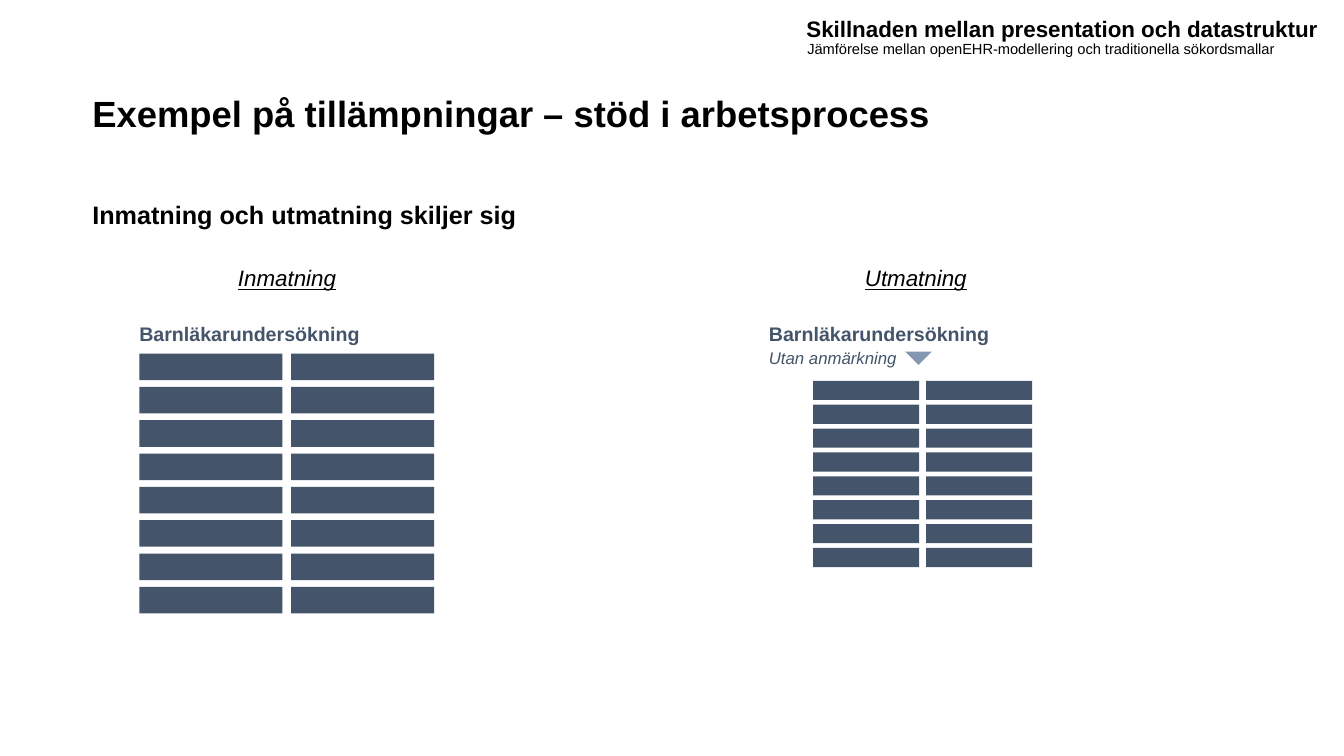
from dataclasses import dataclass
from typing import Any

import pptx
import pptx.dml.color
import pptx.enum.shapes
import pptx.enum.text
import pptx.util

Pt = pptx.util.Pt
Shape = pptx.enum.shapes.MSO_SHAPE
Anchor = pptx.enum.text.MSO_ANCHOR

BLACK = pptx.dml.color.RGBColor(0x00, 0x00, 0x00)
SLATE = pptx.dml.color.RGBColor(0x44, 0x54, 0x6A)
LIGHT_SLATE = pptx.dml.color.RGBColor(0x84, 0x97, 0xB0)
FONT = "Arial"
ROWS = 8
COLUMNS = 2


@dataclass(frozen=True)
class Frame:
    left: float
    top: float
    width: float
    height: float


@dataclass(frozen=True)
class FieldGrid:
    first: Frame
    column_step: float
    row_step: float


@dataclass(frozen=True)
class FormView:
    heading: str
    heading_left: float
    form_left: float
    grid: FieldGrid


VIEWS = [
    FormView("Inmatning", 170, 99.5,
             FieldGrid(Frame(99.5, 252.6, 102.2, 19), 108.5, 23.8)),
    FormView("Utmatning", 617.8, 549.2,
             FieldGrid(Frame(580.8, 272, 75.8, 13.7), 80.7, 17.05)),
]


def place(box: Any, frame: Frame) -> None:
    box.left, box.top = Pt(frame.left), Pt(frame.top)
    box.width, box.height = Pt(frame.width), Pt(frame.height)


def write(box: Any, text: str, *, size: float, color: Any = BLACK,
          bold: bool = False, italic: bool = False,
          underline: bool = False, anchor: Any = Anchor.TOP) -> None:
    body = box.text_frame
    body.auto_size = pptx.enum.text.MSO_AUTO_SIZE.NONE
    body.word_wrap = True
    body.vertical_anchor = anchor
    body.margin_left = body.margin_top = Pt(0)
    body.margin_right = body.margin_bottom = Pt(0)
    para = body.paragraphs[0]
    para.alignment = pptx.enum.text.PP_ALIGN.LEFT
    span = para.add_run()
    span.text = text
    span.font.name = FONT
    span.font.size = Pt(size)
    span.font.color.rgb = color
    span.font.bold = bold
    span.font.italic = italic
    span.font.underline = underline


def add_text(page: Any, frame: Frame, text: str, **style: Any) -> None:
    box = page.shapes.add_textbox(0, 0, 0, 0)
    place(box, frame)
    write(box, text, **style)


def add_block(shapes: Any, kind: Any, frame: Frame, color: Any) -> Any:
    block = shapes.add_shape(kind, Pt(frame.left), Pt(frame.top),
                             Pt(frame.width), Pt(frame.height))
    block.shadow.inherit = False
    block.fill.solid()
    block.fill.fore_color.rgb = color
    block.line.fill.background()
    return block


def add_grid(page: Any, grid: FieldGrid) -> None:
    group = page.shapes.add_group_shape()
    first = grid.first
    for row in range(ROWS):
        for column in range(COLUMNS):
            cell = Frame(first.left + column * grid.column_step,
                         first.top + row * grid.row_step,
                         first.width, first.height)
            add_block(group.shapes, Shape.RECTANGLE, cell, SLATE)


def add_view(page: Any, view: FormView) -> None:
    add_text(page, Frame(view.heading_left, 188.8, 76.5, 28), view.heading,
             size=16, italic=True, underline=True)
    add_text(page, Frame(view.form_left, 229.7, 188.5, 28),
             "Barnläkarundersökning", size=14, color=SLATE, bold=True)
    add_grid(page, view.grid)


def main() -> None:
    deck = pptx.Presentation()
    deck.slide_width, deck.slide_height = Pt(960), Pt(540)
    page = deck.slides.add_slide(deck.slide_layouts[5])

    title = page.shapes.title
    place(title, Frame(66, 28.8, 828, 104.4))
    write(title, "Exempel på tillämpningar – stöd i arbetsprocess",
          size=26, bold=True, anchor=Anchor.MIDDLE)

    add_text(page, Frame(66, 142.6, 319, 48),
             "Inmatning och utmatning skiljer sig", size=18, bold=True)
    add_text(page, Frame(576, 2.2, 384, 36.7),
             "Skillnaden mellan presentation och datastruktur",
             size=16, bold=True, anchor=Anchor.MIDDLE)
    add_text(page, Frame(576.7, 28.8, 363, 20),
             "Jämförelse mellan openEHR-modellering och traditionella sökordsmallar",
             size=10.5)

    for view in VIEWS:
        add_view(page, view)

    add_text(page, Frame(549.2, 248.4, 95, 18.7), "Utan anmärkning",
             size=12, color=SLATE, italic=True)
    marker = add_block(page.shapes, Shape.ISOSCELES_TRIANGLE,
                       Frame(646.6, 251.2, 19, 9.4), LIGHT_SLATE)
    marker.rotation = 180

    deck.save("out.pptx")


if __name__ == "__main__":
    main()
